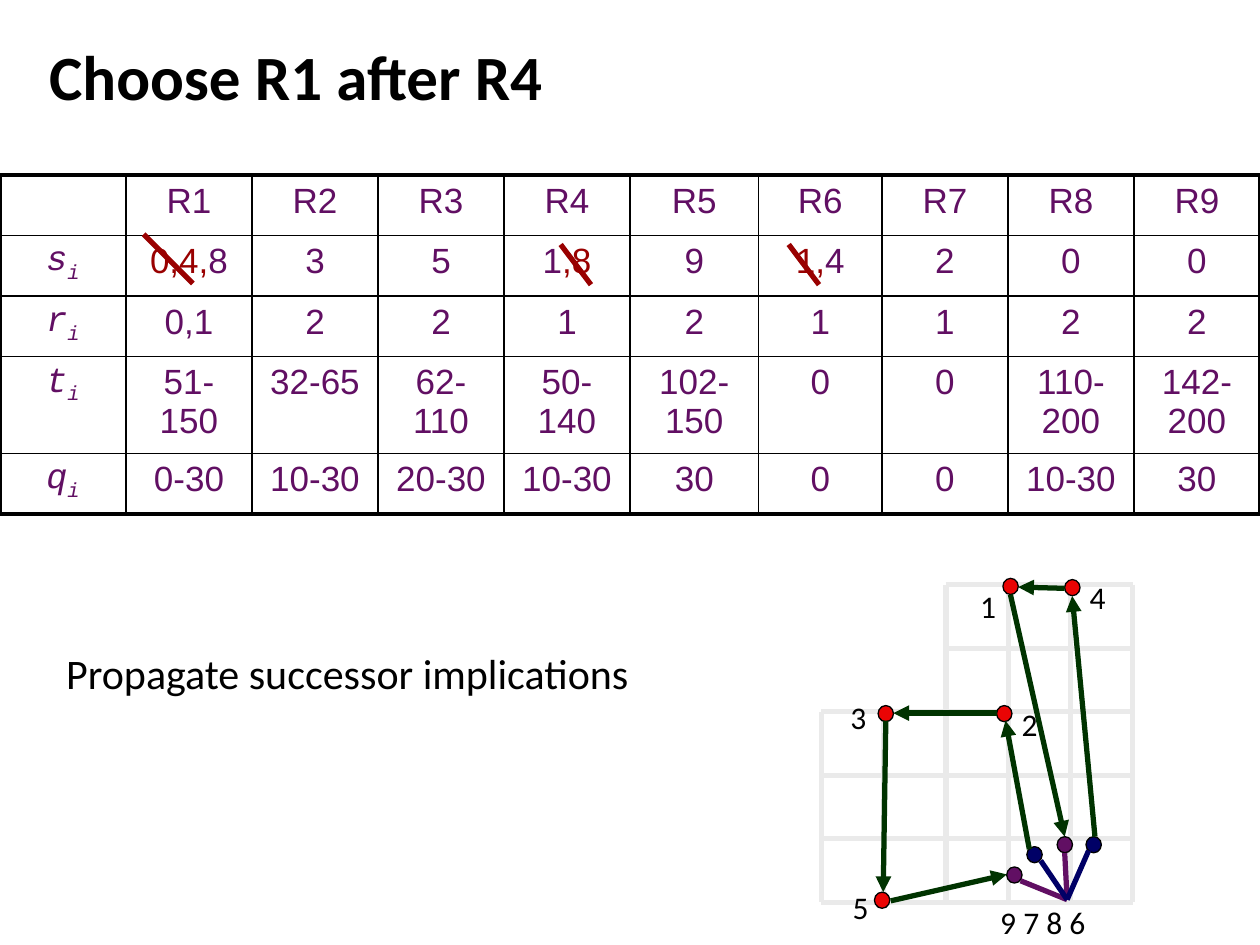
import pptx
import pptx.util
import pptx.dml.color
import pptx.enum.shapes
import pptx.enum.text
import pptx.oxml
from lxml import etree

Pt = pptx.util.Pt
RGB = pptx.dml.color.RGBColor.from_string
qn = pptx.oxml.ns.qn
C = {"black": "000000", "purple": "610F63", "strike": "990000", "grid": "EAEAEA",
     "red": "EA0404", "navy": "000066", "green": "003300"}

prs = pptx.Presentation()
prs.slide_width, prs.slide_height = Pt(720), Pt(540)
s = prs.slides.add_slide(prs.slide_layouts[6])


def add_line(x1, y1, x2, y2, color, arrow=False):
    sp = s.shapes.add_connector(pptx.enum.shapes.MSO_CONNECTOR.STRAIGHT,
                                Pt(x1), Pt(y1), Pt(x2), Pt(y2))
    sp.line.color.rgb = RGB(C[color])
    sp.line.width = Pt(3)
    if arrow:
        etree.SubElement(sp.line._get_or_add_ln(), qn("a:tailEnd"), type="triangle")
    etree.SubElement(sp._element.spPr, qn("a:effectLst"))


def add_text(x, y, w, h, text, size, bold=False, inset=(7.2, 3.6, 7.2, 3.6)):
    tf = s.shapes.add_textbox(Pt(x), Pt(y), Pt(w), Pt(h)).text_frame
    tf.word_wrap = True
    tf.margin_left, tf.margin_top, tf.margin_right, tf.margin_bottom = map(Pt, inset)
    p = tf.paragraphs[0]
    p.text = text
    r = p.runs[0]
    r.font.name, r.font.size, r.font.bold = "Calibri", Pt(size), bold
    r.font.color.rgb = RGB(C["black"])


add_text(28.1, 21.6, 553, 67, "Choose R1 after R4", 36, True, (0, 0, 0, 0))

rows = [
    ["", "R1", "R2", "R3", "R4", "R5", "R6", "R7", "R8", "R9"],
    ["s", "0,4,8", "3", "5", "1,8", "9", "1,4", "2", "0", "0"],
    ["r", "0,1", "2", "2", "1", "2", "1", "1", "2", "2"],
    ["t", "51-150", "32-65", "62-110", "50-140", "102-150", "0", "0", "110-200", "142-200"],
    ["q", "0-30", "10-30", "20-30", "10-30", "30", "0", "0", "10-30", "30"],
]
split = {"0,4,8": [("0,4,", "strike"), ("8", "purple")],
         "1,8": [("1", "purple"), (",8", "strike")],
         "1,4": [("1,", "strike"), ("4", "purple")]}
widths = [72] * 5 + [73.5, 70.5] + [72] * 3
heights = [34.6, 34.6, 34.6, 55.4, 34.6]
last_row, last_col = len(rows) - 1, len(widths) - 1
table = s.shapes.add_table(len(rows), len(widths), Pt(0), Pt(100),
                           Pt(sum(widths)), Pt(sum(heights))).table
table.first_row = table.horz_banding = False
for col, width in zip(table.columns, widths):
    col.width = Pt(width)
for row, height in zip(table.rows, heights):
    row.height = Pt(height)
for i, row in enumerate(rows):
    for j, text in enumerate(row):
        cell = table.cell(i, j)
        p = cell.text_frame.paragraphs[0]
        p.alignment = pptx.enum.text.PP_ALIGN.CENTER
        symbol = j == 0 and i > 0
        parts = [(text, "purple"), ("i", "purple")] if symbol else split.get(text, [(text, "purple")])
        for k, (part, color) in enumerate(parts):
            if not part:
                continue
            r = p.add_run()
            r.text = part
            r.font.size = Pt(20)
            r.font.name = "Courier New" if symbol else "Arial"
            r.font.italic = symbol
            r.font.color.rgb = RGB(C[color])
            if symbol and k == 1:
                r.font._element.set("baseline", "-25000")
        tcPr = cell._tc.get_or_add_tcPr()
        outer = {"lnL": j == 0, "lnR": j == last_col, "lnT": i == 0, "lnB": i == last_row}
        for side, thick in outer.items():
            ln = etree.SubElement(tcPr, qn("a:" + side), w=str(Pt(2.25 if thick else 1)))
            fill = etree.SubElement(ln, qn("a:solidFill"))
            etree.SubElement(fill, qn("a:srgbClr"), val=C["black"])
        cell.fill.background()

add_text(25.2, 366.5, 397, 36, "Propagate successor implications", 24,
         inset=(12.6, 3.6, 7.2, 3.6))

for strike in [(82.1, 133.9, 110.2, 162), (320.4, 139.7, 337.7, 162.7),
               (450.7, 139.7, 468, 162.7)]:
    add_line(*strike, "strike")

left, top, dx, dy = 469.4, 334.1, 35.57, 36.29
right, bottom = left + 5 * dx, top + 5 * dy
for n in range(5, -1, -1):
    add_line(left if n > 1 else left + 2 * dx, top + n * dy, right, top + n * dy, "grid")
for n in range(6):
    add_line(left + n * dx, top if n > 1 else top + 2 * dy, left + n * dx, bottom, "grid")

for x, y, color in [
    (501.8, 403.2, "red"), (499.7, 509.8, "red"), (573.1, 330.5, "red"),
    (608.4, 331.2, "red"), (569.5, 403.2, "red"),
    (575.3, 495.4, "purple"), (586.8, 483.8, "navy"),
    (620.6, 478.1, "navy"), (604.1, 478.1, "purple"),
]:
    sp = s.shapes.add_shape(pptx.enum.shapes.MSO_SHAPE.OVAL, Pt(x), Pt(y), Pt(8.8), Pt(9.2))
    sp.shadow.inherit = False
    sp.fill.solid()
    sp.fill.fore_color.rgb = RGB(C[color])
    sp.line.color.rgb = RGB(C["black"])
    sp.line.width = Pt(0.75)

for text, x, y, w in [("2", 576.7, 399.6, 18), ("4", 615.6, 326.9, 18), ("1", 553, 331.9, 18),
                      ("3", 478.8, 395.3, 18), ("5", 480.2, 504, 18),
                      ("9 7 8 6", 564.5, 512.6, 81.4)]:
    add_text(x, y, w, 28.8, text, 18, inset=(7.2, 3.6, 0, 3.6))

hub = (609.8, 514.1)
for x, y, color in [(583.2, 503.3, "purple"), (608.4, 487.4, "purple"),
                    (594.7, 491.8, "navy"), (622.1, 486, "navy")]:
    add_line(x, y, *hub, color)

for route in [(588.2, 485.3, 574.6, 411.8), (509, 514.8, 575.3, 499.7),
              (569.5, 407.5, 510.5, 407.5), (506.2, 411.8, 504.7, 509.8),
              (625.7, 478.1, 612.7, 340.6), (608.4, 336.2, 581.8, 335.5),
              (577.4, 339.8, 608.4, 478.1)]:
    add_line(*route, "green", True)

prs.save("out.pptx")
